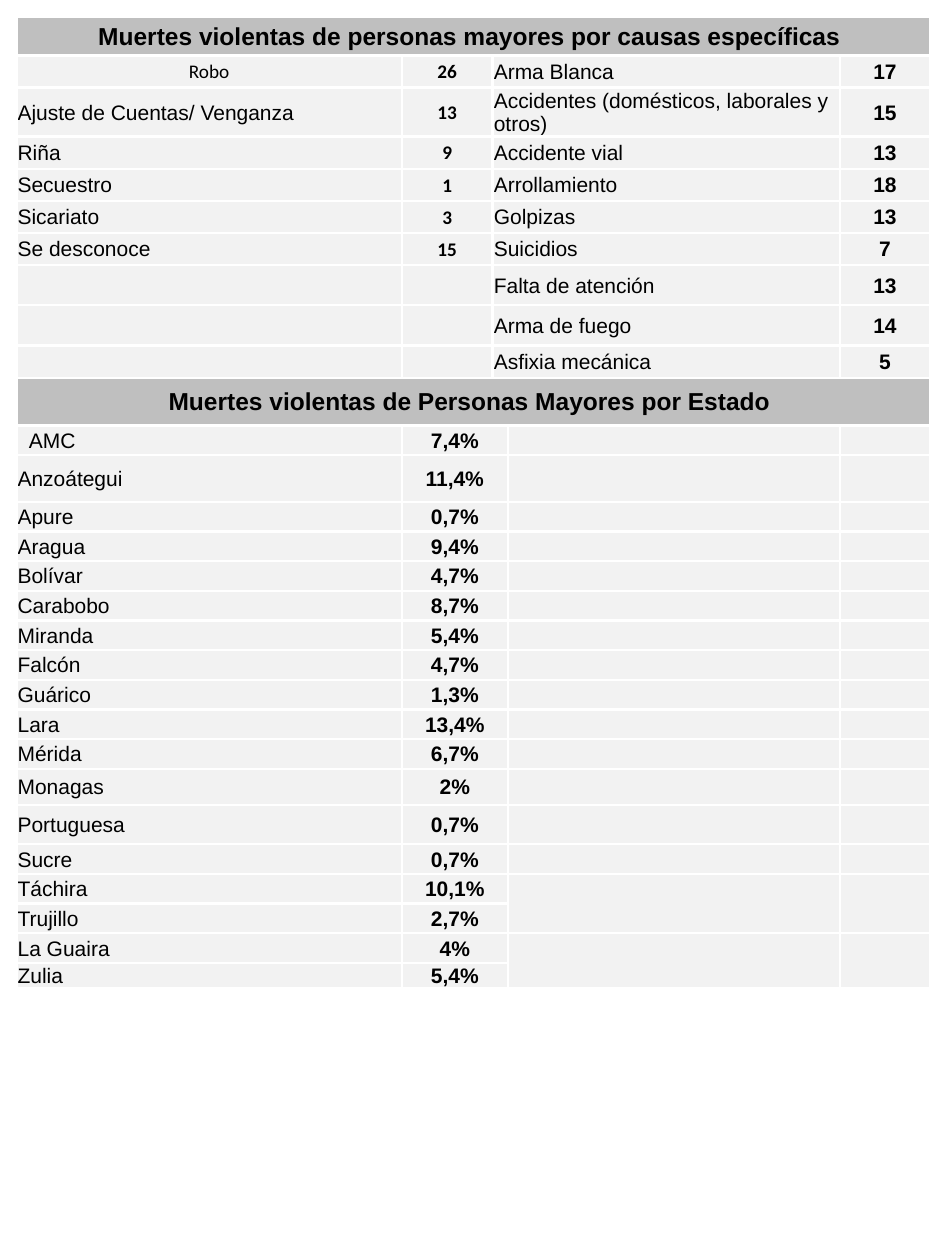
from dataclasses import dataclass

from lxml import etree
from pptx import Presentation
from pptx.dml.color import RGBColor
from pptx.enum import text
from pptx.oxml import ns
from pptx.util import Inches, Pt


@dataclass(frozen=True)
class Theme:
    heading_fill: str = "BFBFBF"
    body_fill: str = "F2F2F2"
    ink: str = "000000"
    rule: str = "FFFFFF"
    rule_width: float = 1.5
    font: str = "Arial"
    count_font: str = "Calibri"
    heading_size: int = 14
    body_size: int = 12
    count_size: int = 11
    empty_size: int = 10


@dataclass(frozen=True)
class Cause:
    left: str
    left_count: str
    right: str
    right_count: str
    height: float


@dataclass(frozen=True)
class State:
    name: str
    share: str
    height: float


THEME = Theme()
COLUMNS = (3.06, 0.72, 0.12, 2.64, 0.71)
INSET = 0.01
HEADING_HEIGHTS = (0.31, 0.38)
CAUSE_ROW = 1.53 / 6
STATE_ROW = 2.12 / 9

CAUSES = [
    Cause("Robo", "26", "Arma Blanca", "17", CAUSE_ROW),
    Cause("Ajuste de Cuentas/ Venganza", "13",
          "Accidentes (domésticos, laborales y otros)", "15", 0.39),
    Cause("Riña", "9", "Accidente vial", "13", CAUSE_ROW),
    Cause("Secuestro", "1", "Arrollamiento", "18", CAUSE_ROW),
    Cause("Sicariato", "3", "Golpizas", "13", CAUSE_ROW),
    Cause("Se desconoce", "15", "Suicidios", "7", CAUSE_ROW),
    Cause("", "", "Falta de atención", "13", 0.32),
    Cause("", "", "Arma de fuego", "14", 0.32),
    Cause("", "", "Asfixia mecánica", "5", CAUSE_ROW),
]
STATES = [
    State("AMC", "7,4%", STATE_ROW),
    State("Anzoátegui", "11,4%", 0.37),
    State("Apure", "0,7%", STATE_ROW),
    State("Aragua", "9,4%", STATE_ROW),
    State("Bolívar", "4,7%", STATE_ROW),
    State("Carabobo", "8,7%", STATE_ROW),
    State("Miranda", "5,4%", STATE_ROW),
    State("Falcón", "4,7%", STATE_ROW),
    State("Guárico", "1,3%", STATE_ROW),
    State("Lara", "13,4%", STATE_ROW),
    State("Mérida", "6,7%", STATE_ROW),
    State("Monagas", "2%", 0.29),
    State("Portuguesa", "0,7%", 0.31),
    State("Sucre", "0,7%", STATE_ROW),
    State("Táchira", "10,1%", STATE_ROW),
    State("Trujillo", "2,7%", STATE_ROW),
    State("La Guaira", "4%", STATE_ROW),
    State("Zulia", "5,4%", 0.19),
]
# States whose two empty right-hand cells also cover the next row
TALL_BLANKS = ("Táchira", "La Guaira")


def style_cell(cell, fill: str) -> None:
    """Set the rules, fill, insets and anchor of a still empty cell."""
    properties = cell._tc.get_or_add_tcPr()
    for side in ("a:lnL", "a:lnR", "a:lnT", "a:lnB"):
        line = etree.SubElement(properties, ns.qn(side), w=str(Pt(THEME.rule_width)))
        solid = etree.SubElement(line, ns.qn("a:solidFill"))
        etree.SubElement(solid, ns.qn("a:srgbClr"), val=THEME.rule)
    cell.fill.solid()
    cell.fill.fore_color.rgb = RGBColor.from_string(fill)
    cell.margin_left = cell.margin_right = cell.margin_top = Inches(INSET)
    cell.margin_bottom = 0
    cell.vertical_anchor = text.MSO_ANCHOR.MIDDLE
    # A small end mark keeps empty cells from stretching their row
    paragraph = cell.text_frame.paragraphs[0]
    etree.SubElement(paragraph._p, ns.qn("a:endParaRPr"), sz=str(THEME.empty_size * 100))


def write(cell, words: str, *, size: int = THEME.body_size, font: str = THEME.font,
          bold: bool = False, centred: bool = False, indent: float = 0) -> None:
    if not words:
        return
    cell.margin_left = Inches(INSET + indent)
    paragraph = cell.text_frame.paragraphs[0]
    paragraph.alignment = text.PP_ALIGN.CENTER if centred else text.PP_ALIGN.LEFT
    span = paragraph.add_run()
    span.text = words
    span.font.name = font
    span.font.size = Pt(size)
    span.font.bold = bold
    span.font.color.rgb = RGBColor.from_string(THEME.ink)


def add_heading(table, row: int, words: str) -> None:
    table.cell(row, 0).merge(table.cell(row, len(COLUMNS) - 1))
    write(table.cell(row, 0), words, size=THEME.heading_size, bold=True, centred=True)


def add_cause(table, row: int, cause: Cause) -> None:
    small = {"size": THEME.count_size, "font": THEME.count_font, "centred": True}
    label_format = small if cause.left == "Robo" else {}
    table.cell(row, 2).merge(table.cell(row, 3))
    write(table.cell(row, 0), cause.left, **label_format)
    write(table.cell(row, 1), cause.left_count, bold=True, **small)
    write(table.cell(row, 2), cause.right)
    write(table.cell(row, 4), cause.right_count, bold=True, centred=True)


def add_state(table, row: int, state: State) -> None:
    table.cell(row, 1).merge(table.cell(row, 2))
    write(table.cell(row, 0), state.name, indent=0.09 if state.name == "AMC" else 0)
    write(table.cell(row, 1), state.share, bold=True, centred=True)
    if state.name in TALL_BLANKS:
        for column in (3, 4):
            table.cell(row, column).merge(table.cell(row + 1, column))


def main() -> None:
    deck = Presentation()
    deck.slide_width, deck.slide_height = Inches(7.5), Inches(10)
    page = deck.slides.add_slide(deck.slide_layouts[6])

    # Table grid
    heights = [HEADING_HEIGHTS[0], *(cause.height for cause in CAUSES),
               HEADING_HEIGHTS[1], *(state.height for state in STATES)]
    table = page.shapes.add_table(len(heights), len(COLUMNS), Inches(0.13), Inches(0.13),
                                  Inches(sum(COLUMNS)), Inches(sum(heights))).table
    table.first_row = table.horz_banding = False
    for column, width in zip(table.columns, COLUMNS):
        column.width = Inches(width)
    state_heading = len(CAUSES) + 1
    for index, (row, height) in enumerate(zip(table.rows, heights)):
        row.height = Inches(height)
        is_heading = index in (0, state_heading)
        for cell in row.cells:
            style_cell(cell, THEME.heading_fill if is_heading else THEME.body_fill)

    # Deaths by cause
    add_heading(table, 0, "Muertes violentas de personas mayores por causas específicas ")
    for row, cause in enumerate(CAUSES, start=1):
        add_cause(table, row, cause)

    # Deaths by state
    add_heading(table, state_heading, "Muertes violentas de Personas Mayores por Estado ")
    for row, state in enumerate(STATES, start=state_heading + 1):
        add_state(table, row, state)

    deck.save("out.pptx")


if __name__ == "__main__":
    main()
